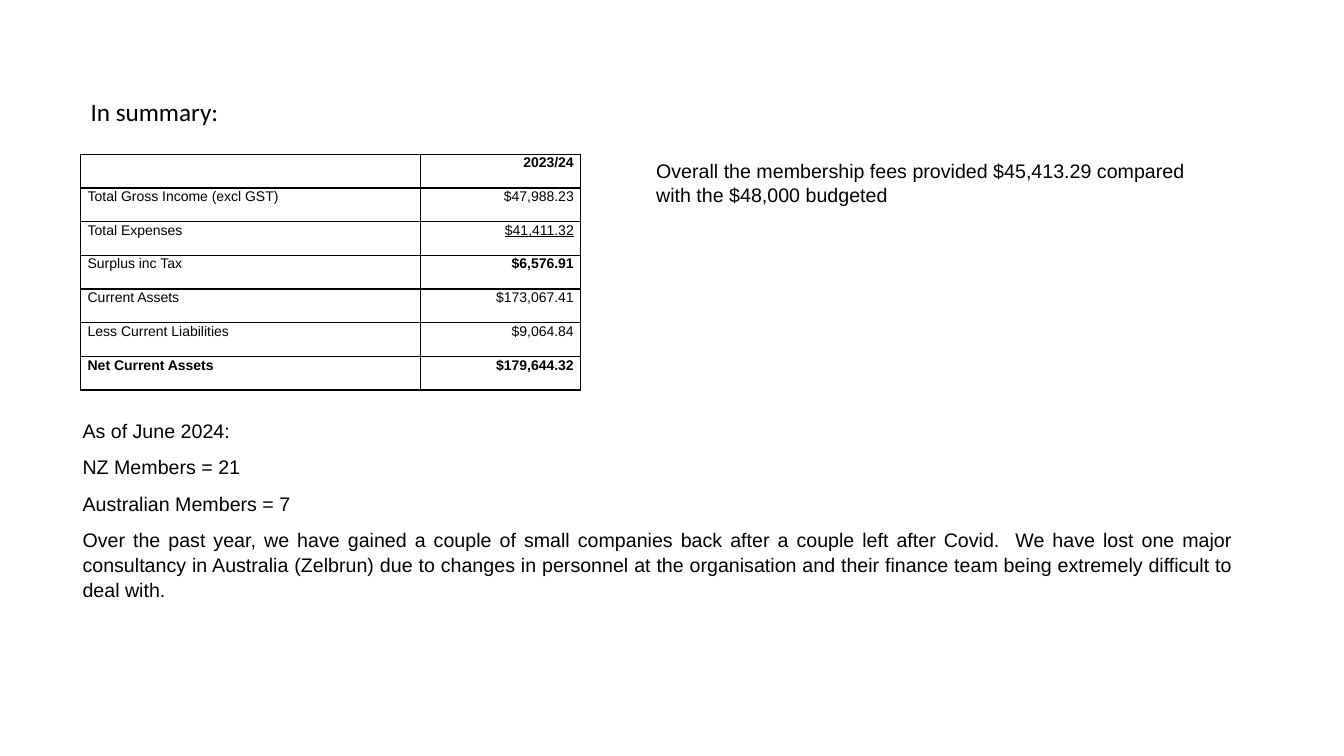
from lxml.etree import SubElement
from pptx import Presentation
from pptx.dml.color import RGBColor
from pptx.enum.text import MSO_AUTO_SIZE, PP_ALIGN
from pptx.oxml.ns import qn
from pptx.util import Inches, Pt

BLACK = RGBColor(0x00, 0x00, 0x00)


def style_run(para, font_name, size):
    for span in para.runs:
        span.font.name = font_name
        span.font.size = Pt(size)
        span.font.color.rgb = BLACK


def add_text(slide, left, top, width, height, lines, font_name, size):
    box = slide.shapes.add_textbox(Inches(left), Inches(top), Inches(width), Inches(height))
    frame = box.text_frame
    frame.word_wrap = True
    frame.auto_size = MSO_AUTO_SIZE.SHAPE_TO_FIT_TEXT
    frame.text = "\n".join(lines)
    for para in frame.paragraphs:
        style_run(para, font_name, size)
    return frame


deck = Presentation()
deck.slide_width = Inches(13.33)
deck.slide_height = Inches(7.5)
slide = deck.slides.add_slide(deck.slide_layouts[6])

# Financial summary table
accounts = [
    ("", "2023/24"),
    ("Total Gross Income (excl GST)", "$47,988.23"),
    ("Total Expenses", "$41,411.32"),
    ("Surplus inc Tax", "$6,576.91"),
    ("Current Assets", "$173,067.41"),
    ("Less Current Liabilities", "$9,064.84"),
    ("Net Current Assets", "$179,644.32"),
]
bold_texts = {"2023/24", "$6,576.91", "Net Current Assets", "$179,644.32"}
underlined_text = "$41,411.32"

table = slide.shapes.add_table(
    len(accounts), 2, Inches(0.8), Inches(1.53), Inches(4.96), Inches(2.34)
).table
table.first_row = False
table.horz_banding = False
table.columns[0].width = Inches(3.37)
table.columns[1].width = Inches(1.59)

for row_index, account in enumerate(accounts):
    for column_index, text in enumerate(account):
        cell = table.cell(row_index, column_index)
        cell.margin_left = cell.margin_right = Inches(0.07)
        cell.margin_top = cell.margin_bottom = 0
        cell.text_frame.text = text
        para = cell.text_frame.paragraphs[0]
        para.alignment = PP_ALIGN.RIGHT if column_index == 1 else PP_ALIGN.LEFT
        para.line_spacing = 1.07
        para.space_before = Pt(1 if row_index else 0)
        para.space_after = Pt(1 if row_index else 8)
        style_run(para, "Arial", 10)
        for span in para.runs:
            span.font.bold = text in bold_texts
            span.font.underline = text == underlined_text
        properties = cell._tc.get_or_add_tcPr()
        for side in ("a:lnL", "a:lnR", "a:lnT", "a:lnB"):
            border = SubElement(properties, qn(side), w=str(Pt(1)))
            fill = SubElement(border, qn("a:solidFill"))
            SubElement(fill, qn("a:srgbClr"), val=str(BLACK))
        cell.fill.background()

# Heading, membership notes and fees
add_text(slide, 0.8, 0.91, 6.73, 0.4, ["In summary:"], "Calibri", 18)

membership = add_text(slide, 0.72, 4.09, 11.61, 1.93, [
    "As of June 2024:",
    "NZ Members = 21",
    "Australian Members = 7",
    "Over the past year, we have gained a couple of small companies back after a couple "
    "left after Covid.  We have lost one major consultancy in Australia (Zelbrun) due to "
    "changes in personnel at the organisation and their finance team being extremely "
    "difficult to deal with.",
], "Arial", 14)
for para in membership.paragraphs:
    para.alignment = PP_ALIGN.JUSTIFY
    para.line_spacing = 1.07
    para.space_after = Pt(8)

add_text(slide, 6.41, 1.53, 5.83, 0.57, [
    "Overall the membership fees provided $45,413.29 compared with the $48,000 budgeted",
], "Arial", 14)

deck.save("out.pptx")
